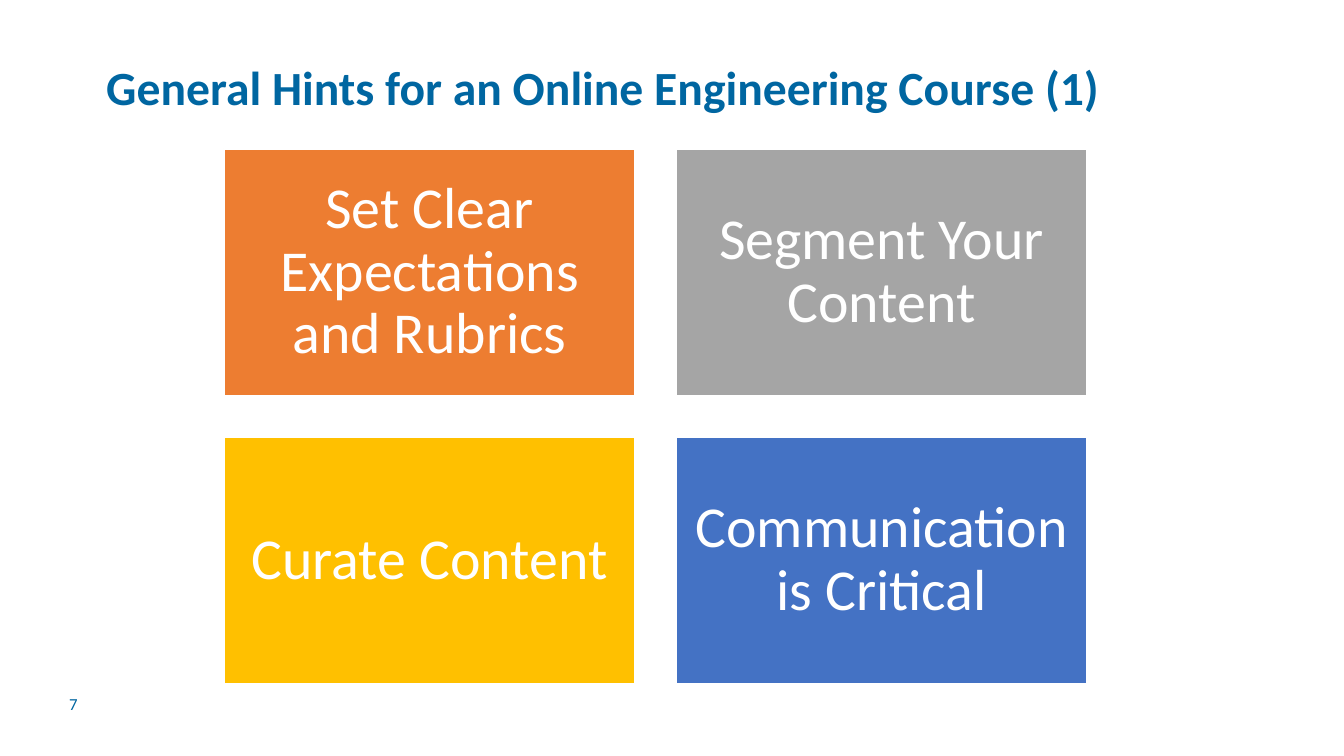
from pptx import Presentation
from pptx.dml.color import RGBColor
from pptx.enum.shapes import MSO_SHAPE
from pptx.enum.text import MSO_ANCHOR, PP_ALIGN
from pptx.util import Pt

RECT = MSO_SHAPE.RECTANGLE
MIDDLE, BOTTOM = MSO_ANCHOR.MIDDLE, MSO_ANCHOR.BOTTOM
LEFT, CENTER = PP_ALIGN.LEFT, PP_ALIGN.CENTER

TITLE = "General Hints for an Online Engineering Course (1)"
NUMBER = "7"
HINTS = [
    ("Set Clear Expectations and Rubrics", "ED7D31"),
    ("Segment Your Content", "A5A5A5"),
    ("Curate Content", "FFC000"),
    ("Communication is Critical", "4472C4"),
]
FONT, BLUE, WHITE = "Calibri", "0066A1", "FFFFFF"
COLS, X, Y, WIDE, HIGH, GAP = 2, 224, 149, 411, 247, 41
PAD = 17


def px(n):
    return round(n * 914400 / 134.4)


def color(code):
    return RGBColor.from_string(code)


def write(shape, text, size, code, anchor, align=LEFT, bold=False, lines=0.9):
    frame = shape.text_frame
    frame.word_wrap = True
    frame.vertical_anchor = anchor
    para = frame.paragraphs[0]
    para.alignment = align
    para.line_spacing = lines
    run = para.add_run()
    run.text = text
    font = run.font
    font.name, font.size, font.bold = FONT, Pt(size), bold
    font.color.rgb = color(code)


def add_label(slide, box, *args, **style):
    write(slide.shapes.add_textbox(*map(px, box)), *args, **style)


def add_card(slide, box, text, fill):
    card = slide.shapes.add_shape(RECT, *map(px, box))
    card.shadow.inherit = False
    card.fill.solid()
    card.fill.fore_color.rgb = color(fill)
    card.line.color.rgb = color(WHITE)
    card.line.width = Pt(1)
    frame = card.text_frame
    frame.margin_left = frame.margin_right = px(PAD)
    frame.margin_top = frame.margin_bottom = px(PAD)
    write(card, text, 31, WHITE, MIDDLE, CENTER)


def main():
    deck = Presentation()
    deck.slide_width, deck.slide_height = px(1344), px(756)
    slide = deck.slides.add_slide(deck.slide_layouts[6])
    add_label(slide, (93, 62, 1159, 60), TITLE, 25.5, BLUE, BOTTOM, bold=True)
    add_label(slide, (56, 684, 71, 40), NUMBER, 9, BLUE, MIDDLE, lines=1.0)
    for i, (text, fill) in enumerate(HINTS):
        row, col = divmod(i, COLS)
        box = (X + col * (WIDE + GAP), Y + row * (HIGH + GAP), WIDE, HIGH)
        add_card(slide, box, text, fill)
    deck.save("out.pptx")


if __name__ == "__main__":
    main()
